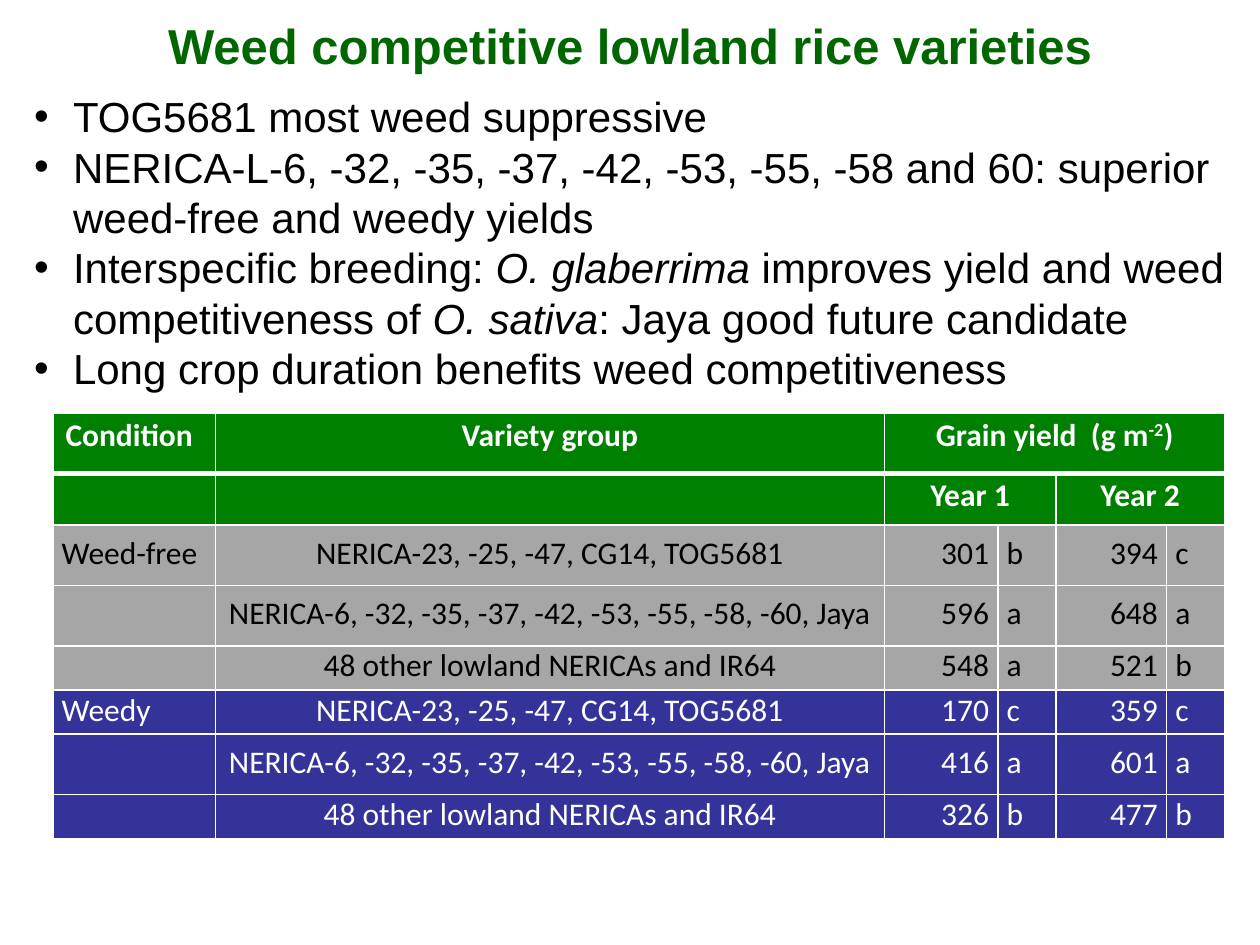
from pptx import Presentation
from pptx.dml.color import RGBColor as Rgb
from pptx.enum.text import MSO_ANCHOR as Anchor, MSO_AUTO_SIZE as AutoSize, PP_ALIGN as Align
from pptx.oxml.ns import qn
from pptx.util import Inches, Pt
from lxml.etree import SubElement

COLORS = {"title": "006600", "text": "000000", "header": "008000",
          "free": "A6A6A6", "weedy": "333399", "white": "FFFFFF"}

BULLETS = [
    "TOG5681 most weed suppressive",
    "NERICA-L-6, -32, -35, -37, -42, -53, -55, -58 and 60: superior weed-free and weedy yields",
    "Interspecific breeding: |O. glaberrima |improves yield and weed competitiveness of "
    "|O. sativa|: Jaya good future candidate",
    "Long crop duration benefits weed competitiveness",
]
GROUPS = ["NERICA-23, -25, -47, CG14, TOG5681",
          "NERICA-6, -32, -35, -37, -42, -53, -55, -58, -60, Jaya",
          "48 other lowland NERICAs and IR64"]
YIELDS = {
    "Weed-free": ["301 b 394 c", "596 a 648 a", "548 a 521 b"],
    "Weedy": ["170 c 359 c", "416 a 601 a", "326 b 477 b"],
}
COLUMN_WIDTHS = [12.9, 53.1, 9, 4.6, 8.8, 4.6]
ROW_HEIGHTS = [4.8, 4, 4.8, 4.8, 3.5, 3.5, 4.8, 3.5]
COLUMN_ALIGNS = [Align.LEFT, Align.CENTER] + [Align.RIGHT, Align.LEFT] * 2


class SlideBuilder:
    GRID_COLUMNS = 100
    GRID_ROWS = 75

    def __init__(self, deck):
        self.deck = deck
        self.page = deck.slides.add_slide(deck.slide_layouts[1])

    def columns(self, count):
        return round(self.deck.slide_width * count / self.GRID_COLUMNS)

    def rows(self, count):
        return round(self.deck.slide_height * count / self.GRID_ROWS)

    def area(self, left, top, width, height):
        return self.columns(left), self.rows(top), self.columns(width), self.rows(height)

    def move(self, shape, *area):
        shape.left, shape.top, shape.width, shape.height = self.area(*area)
        shape.text_frame.auto_size = AutoSize.NONE
        return shape.text_frame

    def style(self, para, size, font, color, bold=False):
        for span in para.runs:
            span.font.size = Pt(size)
            span.font.name = font
            span.font.bold = bold
            span.font.color.rgb = Rgb.from_string(COLORS[color])

    def title(self, text, *area):
        frame = self.move(self.page.shapes.title, *area)
        frame.text = text
        frame.vertical_anchor = Anchor.MIDDLE
        para = frame.paragraphs[0]
        para.alignment = Align.CENTER
        self.style(para, 28, "Arial", "title", bold=True)

    def bullets(self, items, *area):
        frame = self.move(self.page.placeholders[1], *area)
        frame.text = "\n".join(item.replace("|", "") for item in items)
        for para, item in zip(frame.paragraphs, items):
            properties = para._p.get_or_add_pPr()
            properties.set("marL", str(Inches(0.31)))
            properties.set("indent", str(-Inches(0.31)))
            SubElement(properties, qn("a:buChar"), char="•")
            para.space_before = Pt(0)
            para.line_spacing = Pt(28.8)
            pieces = item.split("|")
            para.runs[0].text = pieces[0]
            for number, piece in enumerate(pieces[1:], 1):
                span = para.add_run()
                span.text = piece
                span.font.italic = number % 2 == 1
            self.style(para, 24, "Arial", "text")

    def table(self, widths, heights, left, top):
        frame = self.page.shapes.add_table(
            len(heights), len(widths), *self.area(left, top, sum(widths), sum(heights)))
        table = frame.table
        for column, width in zip(table.columns, widths):
            column.width = self.columns(width)
        for row, height in zip(table.rows, heights):
            row.height = self.rows(height)
        return table

    def borders(self, cell, top=1, bottom=1):
        properties = cell._tc.get_or_add_tcPr()
        for side, width in {"L": 1, "R": 1, "T": top, "B": bottom}.items():
            line = SubElement(properties, qn(f"a:ln{side}"), w=str(Pt(width)))
            fill = SubElement(line, qn("a:solidFill"))
            SubElement(fill, qn("a:srgbClr"), val=COLORS["white"])

    def cell(self, cell, text, fill, align, header=False):
        cell.fill.solid()
        cell.fill.fore_color.rgb = Rgb.from_string(COLORS[fill])
        cell.vertical_anchor = Anchor.TOP if header else Anchor.MIDDLE
        cell.margin_left = cell.margin_right = Inches(0.1 if header else 0.07)
        cell.margin_top = cell.margin_bottom = Inches(0.05 if header else 0)
        if not text:
            return
        para = cell.text_frame.paragraphs[0]
        para.alignment = align
        para.line_spacing = Pt(20)
        for number, piece in enumerate(text.split("^")):
            span = para.add_run()
            span.text = piece
            if number == 1:
                span._r.get_or_add_rPr().set("baseline", "30000")
        self.style(para, 18, "Calibri", "text" if fill == "free" else "white", header)


def yield_table(builder):
    table = builder.table(COLUMN_WIDTHS, ROW_HEIGHTS, 4.2, 32.8)
    headers = [["Condition", "Variety group", "Grain yield  (g m^-2^)", "", "", ""],
               ["", "", "Year 1", "", "Year 2", ""]]
    body = [[condition if index == 0 else "", group, *values.split()]
            for condition, lines in YIELDS.items()
            for index, (group, values) in enumerate(zip(GROUPS, lines))]
    for row, texts in enumerate(headers + body):
        header = row < len(headers)
        fill = "header" if header else "free" if row < 5 else "weedy"
        for column, text in enumerate(texts):
            cell = table.cell(row, column)
            align = Align.CENTER if header and column else COLUMN_ALIGNS[column]
            builder.borders(cell, top=3 if row == 1 else 1, bottom=3 if row == 0 else 1)
            builder.cell(cell, text, fill, align, header)
    for row, first, last in [(0, 2, 5), (1, 2, 3), (1, 4, 5)]:
        table.cell(row, first).merge(table.cell(row, last))


def main():
    deck = Presentation()
    deck.slide_width, deck.slide_height = Inches(10), Inches(7.5)
    builder = SlideBuilder(deck)
    builder.title("Weed competitive lowland rice varieties", 0, 0.5, 100, 6.2)
    builder.bullets(BULLETS, 1.7, 6.7, 98.3, 25.2)
    yield_table(builder)
    deck.save("out.pptx")


if __name__ == "__main__":
    main()
